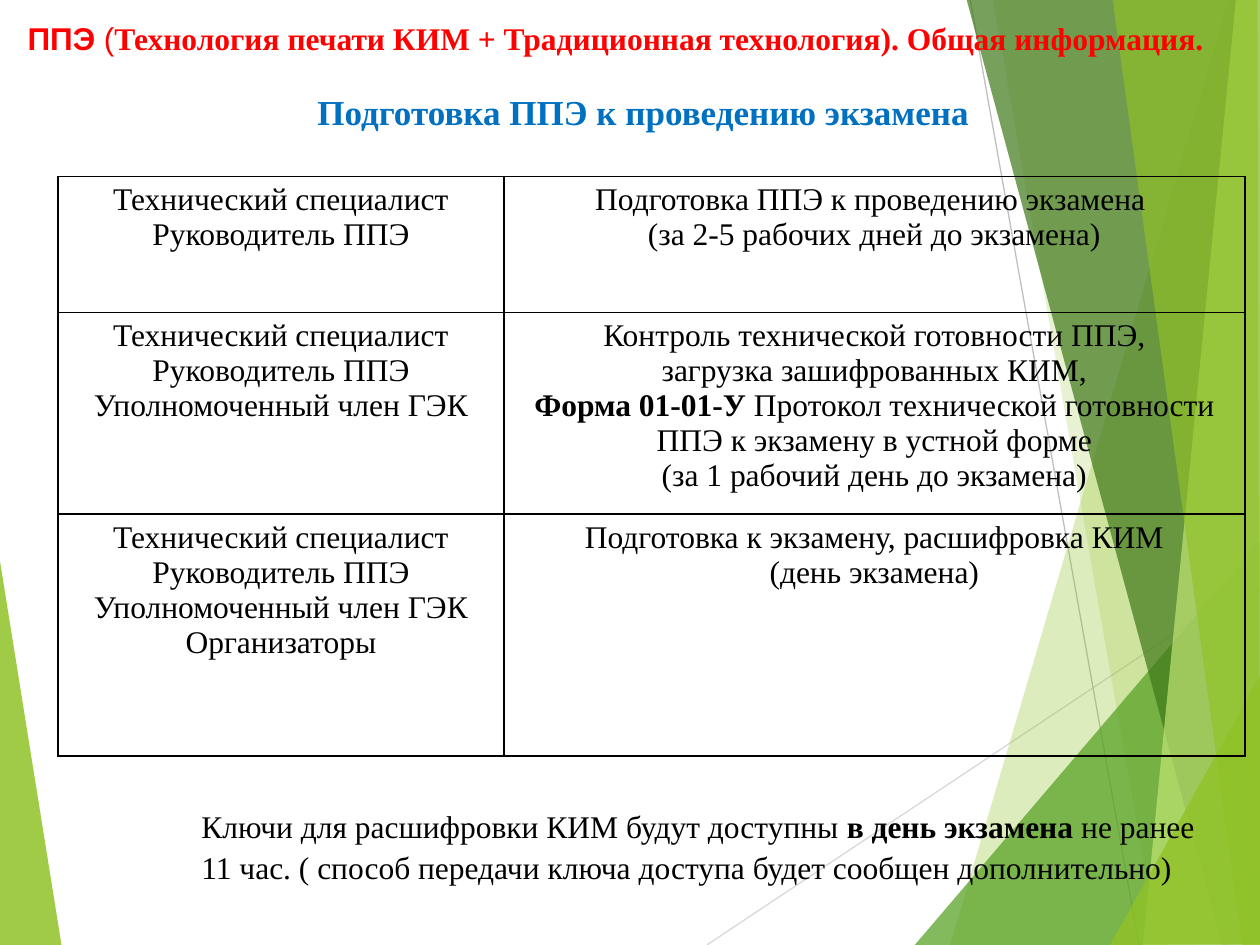
from lxml import etree
from pptx import Presentation
from pptx.dml.color import RGBColor
from pptx.enum.shapes import MSO_CONNECTOR
from pptx.enum.text import MSO_ANCHOR, PP_ALIGN
from pptx.oxml.ns import qn
from pptx.util import Inches, Pt

STRAIGHT = MSO_CONNECTOR.STRAIGHT
TOP = MSO_ANCHOR.TOP
LEFT, CENTER = PP_ALIGN.LEFT, PP_ALIGN.CENTER

COLORS = {
    "lime": "90C226", "green": "54A021", "forest": "3F7819", "pale": "C0E474",
    "light_line": "D9D9D9", "gray_line": "BFBFBF",
    "title": "0070C0", "header": "FF0000", "text": "000000",
}
SERIF, SANS = "Times New Roman", "Arial"

# Corner points, colour and opacity in percent, from back to front
LEFT_WEDGE = ([(-0.01, 4.39), (0.49, 7.51), (-0.01, 7.5)], "lime", 85)
RIGHT_FACETS = [
    ([(9.75, 0), (7.54, 7.5), (10.02, 7.51), (10.01, 0.01)], "lime", 30),
    ([(7.88, -0.01), (9.19, 7.5), (10.01, 7.5), (10.01, -0.01)], "lime", 20),
    ([(7.26, 7.5), (10, 4.29), (10.01, 7.5)], "green", 72),
    ([(7.67, -0.01), (9.7, 7.5), (10.01, 7.49), (10.01, -0.01)], "forest", 70),
    ([(9.81, -0.01), (9.07, 7.5), (10.01, 7.5), (10, -0.01)], "pale", 70),
    ([(8.83, -0.01), (9.86, 7.5), (10, 7.5), (9.98, -0.01)], "lime", 65),
    ([(8.81, 7.5), (10.01, 5.35), (10.01, 7.49)], "lime", 80),
]

# Each cell is a list of paragraphs; each paragraph is a list of (text, bold)
STAFF = [[(name, False)] for name in (
    "Технический специалист", "Руководитель ППЭ",
    "Уполномоченный член ГЭК", "Организаторы")]
STAGES = [
    (STAFF[:2], [
        [("Подготовка ППЭ к проведению экзамена ", False)],
        [("(за 2-5 рабочих дней до экзамена)", False)],
    ]),
    (STAFF[:3], [
        [("Контроль технической готовности ППЭ,", False)],
        [("загрузка зашифрованных КИМ,", False)],
        [("Форма 01-01-У ", True),
         ("Протокол технической готовности ППЭ к экзамену в устной форме", False)],
        [("(за 1 рабочий день до экзамена)", False)],
    ]),
    (STAFF, [
        [("Подготовка к экзамену, расшифровка КИМ", False)],
        [("(день экзамена)", False)],
    ]),
]


def rgb(name):
    return RGBColor.from_string(COLORS[name])


class SlideBuilder:
    def __init__(self, slide, font=SERIF, size=18):
        self.slide, self.font, self.size = slide, font, size

    def facet(self, points, color, opacity):
        corners = [(Inches(x), Inches(y)) for x, y in points]
        outline = self.slide.shapes.build_freeform(*corners[0])
        outline.add_line_segments(corners[1:], close=True)
        shape = outline.convert_to_shape()
        shape.shadow.inherit = False
        shape.line.fill.background()
        shape.fill.solid()
        shape.fill.fore_color.rgb = rgb(color)
        fill_color = shape.element.spPr.find(f".//{qn('a:srgbClr')}")
        etree.SubElement(fill_color, qn("a:alpha"), val=str(opacity * 1000))

    def line(self, start, end, color):
        connector = self.slide.shapes.add_connector(
            STRAIGHT, *(Inches(length) for length in start + end))
        connector.line.color.rgb = rgb(color)
        connector.line.width = Pt(0.75)
        etree.SubElement(connector.element.spPr, qn("a:effectLst"))

    def fill_text(self, frame, paragraphs, align=LEFT, color="text", size=None):
        frame.word_wrap = True
        for index, spans in enumerate(paragraphs):
            para = frame.paragraphs[0] if index == 0 else frame.add_paragraph()
            para.alignment = align
            para.font.name = self.font
            para.font.size = Pt(size or self.size)
            para.font.color.rgb = rgb(color)
            for text, bold, *font in spans:
                span = para.add_run()
                span.text = text
                span.font.bold = bold
                if font:
                    span.font.name = font[0]

    def title(self, text, area):
        title = self.slide.shapes.title
        title.left, title.top, title.width, title.height = map(Inches, area)
        title.text_frame.vertical_anchor = TOP
        self.fill_text(title.text_frame, [[(text, True)]], CENTER, "title", 20)
        # Bring the title in front of the backdrop
        title.element.getparent().append(title.element)

    def textbox(self, spans, area, color="text", spacing=1.0):
        box = self.slide.shapes.add_textbox(*map(Inches, area))
        self.fill_text(box.text_frame, [spans], color=color)
        box.text_frame.paragraphs[0].line_spacing = spacing

    def table(self, rows, left, top, widths, heights):
        table = self.slide.shapes.add_table(
            len(heights), len(widths), Inches(left), Inches(top),
            Inches(sum(widths)), Inches(sum(heights))).table
        table.first_row = table.horz_banding = False
        for column, width in zip(table.columns, widths):
            column.width = Inches(width)
        for row, height, contents in zip(table.rows, heights, rows):
            row.height = Inches(height)
            for cell, paragraphs in zip(row.cells, contents):
                self.fill_text(cell.text_frame, paragraphs, CENTER)
                self.borders(cell)
                cell.fill.background()

    def borders(self, cell):
        properties = cell._tc.get_or_add_tcPr()
        for side in ("lnL", "lnR", "lnT", "lnB"):
            border = etree.SubElement(properties, qn(f"a:{side}"), w=str(Pt(1)))
            fill = etree.SubElement(border, qn("a:solidFill"))
            etree.SubElement(fill, qn("a:srgbClr"), val=COLORS["text"])


def main():
    deck = Presentation()
    deck.slide_width, deck.slide_height = Inches(10), Inches(7.5)
    page = SlideBuilder(deck.slides.add_slide(deck.slide_layouts[5]))

    # Backdrop
    page.facet(*LEFT_WEDGE)
    page.line((5.61, 7.5), (10.01, 4.57), "light_line")
    page.line((7.7, 0), (9.04, 7.5), "gray_line")
    for facet in RIGHT_FACETS:
        page.facet(*facet)

    # Title and table of stages
    page.title("Подготовка ППЭ к проведению экзамена", (1.5, 0.67, 7.21, 0.75))
    page.table(STAGES, 0.46, 1.4, widths=(3.54, 5.88), heights=(1.08, 1.6, 1.92))

    # Note below the table
    page.textbox([
        ("Ключи для расшифровки КИМ будут доступны ", False),
        ("в день экзамена ", True),
        ("не ранее 11 час. ( способ передачи ключа доступа "
         "будет сообщен дополнительно)", False),
    ], (1.5, 6.33, 8.33, 0.71), spacing=1.09)

    # Header line
    page.textbox([
        ("ППЭ ", True, SANS),
        ("(", False, SANS),
        ("Технология печати КИМ + Традиционная технология). "
         "Общая информация.", True),
    ], (0.12, 0.1, 9.75, 0.4), color="header")

    deck.save("out.pptx")


if __name__ == "__main__":
    main()
